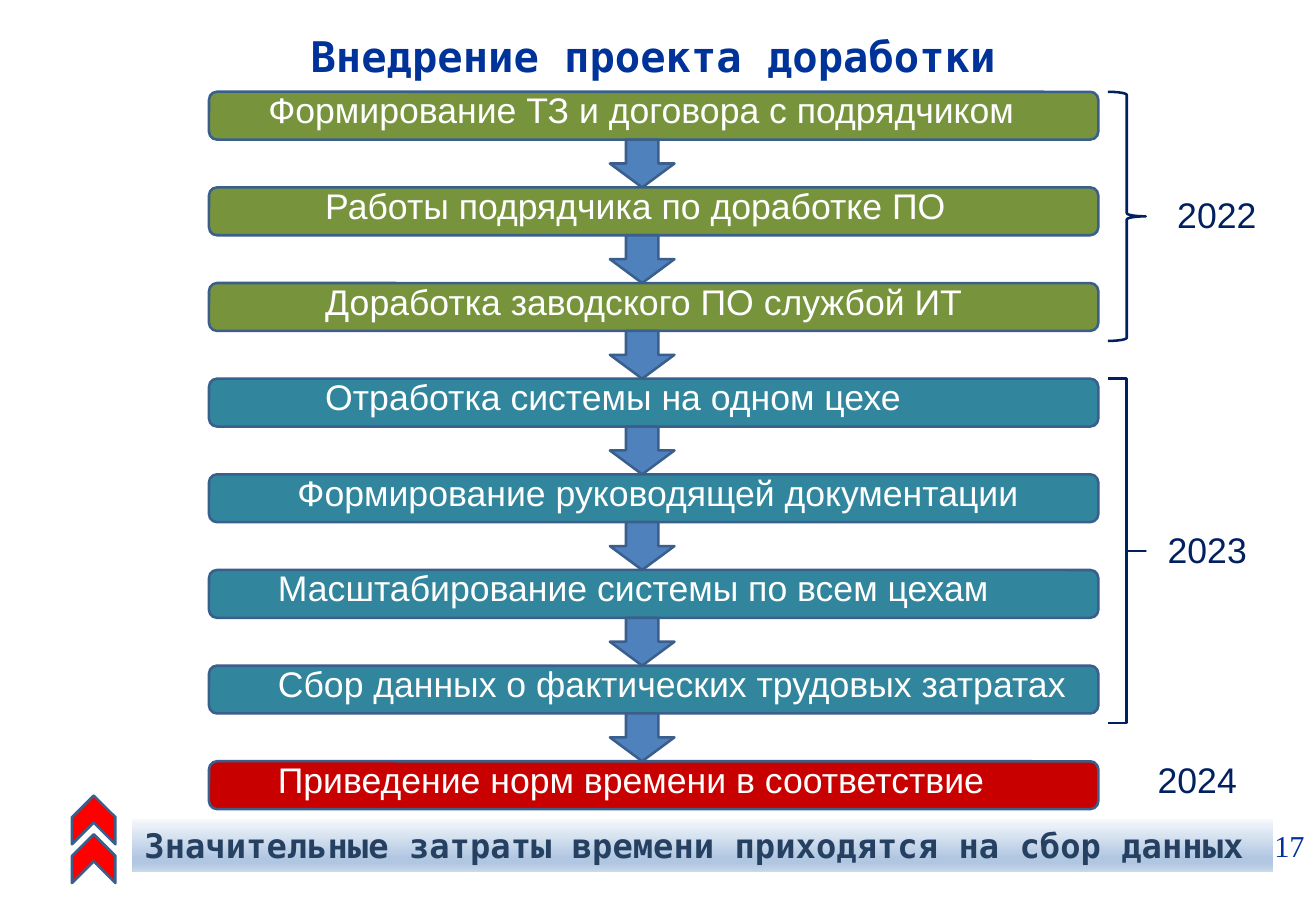
from lxml.etree import SubElement
from pptx import Presentation
from pptx.dml.color import RGBColor
from pptx.enum.shapes import MSO_SHAPE
from pptx.enum.text import MSO_ANCHOR, MSO_AUTO_SIZE, PP_ALIGN
from pptx.oxml.ns import qn
from pptx.util import Pt

SCALE = 3600
TOP, PITCH, STEP_H = 192, 200, 100
MONO = "DejaVu Sans Mono"
COLORS = {
    "green": "77933C", "teal": "31859C", "red": "C80000", "arrow": "4F81BD",
    "edge": "3A5F8C", "navy": "002060", "title": "003399", "slate": "254061",
    "white": "FFFFFF", "bright": "FF0000",
}
STEPS = [
    ("Формирование ТЗ и договора с подрядчиком", "green", 536, 1631),
    ("Работы подрядчика по доработке ПО", "green", 655, 1361),
    ("Доработка заводского ПО службой ИТ", "green", 655, 1417),
    ("Отработка системы на одном цехе", "teal", 655, 1417),
    ("Формирование руководящей документации", "teal", 597, 1580),
    ("Масштабирование системы по всем цехам", "teal", 556, 1620),
    ("Сбор данных о фактических трудовых затратах", "teal", 556, 1730),
    ("Приведение норм времени в соответствие", "red", 556, 1679),
]
YEARS = [("2022", 2436, 1), ("2023", 2416, 4.5), ("2024", 2395, 6.9)]
STOPS = [(0, "F6F9FC"), (74, "B0C6E1"), (83, "B0C6E1"), (100, "CAD9EB")]


def px(value):
    return round(value * SCALE)


def color(name):
    return RGBColor.from_string(COLORS[name])


def place(item, left, top, width, height):
    item.left, item.top = px(left), px(top)
    item.width, item.height = px(width), px(height)


def text(item, words, size=21.1, font="Arial", tint="navy", bold=False,
         align=PP_ALIGN.LEFT, anchor=MSO_ANCHOR.TOP, wrap=True, pad=25):
    frame = item.text_frame
    frame.text = words
    frame.word_wrap = wrap
    frame.auto_size = MSO_AUTO_SIZE.SHAPE_TO_FIT_TEXT
    frame.vertical_anchor = anchor
    frame.margin_left = frame.margin_right = px(pad)
    line = frame.paragraphs[0]
    line.alignment = align
    style = line.runs[0].font
    style.size, style.name, style.bold = Pt(size), font, bold
    style.color.rgb = color(tint)


def label(slide, words, left, top, width, height=117, **style):
    box = slide.shapes.add_textbox(px(left), px(top), px(width), px(height))
    text(box, words, **style)


def shape(slide, kind, left, top, width, height, fill=None, edge="edge"):
    item = slide.shapes.add_shape(kind, px(left), px(top), px(width), px(height))
    item.shadow.inherit = False
    if fill:
        item.fill.solid()
        item.fill.fore_color.rgb = color(fill)
    else:
        item.fill.background()
    if edge:
        item.line.color.rgb = color(edge)
        item.line.width = Pt(1.5)
    else:
        item.line.fill.background()
    return item


def blend(item, stops):
    item.fill.gradient()
    item.fill.gradient_angle = 270
    group = next(item.element.iter(qn("a:gsLst")))
    for old in list(group):
        group.remove(old)
    for spot, tint in stops:
        stop = SubElement(group, qn("a:gs"), pos=str(spot * 1000))
        SubElement(stop, qn("a:srgbClr"), val=tint)


def step(slide, top, words, fill, left, width, last):
    shape(slide, MSO_SHAPE.ROUNDED_RECTANGLE, 437, top, 1859, STEP_H, fill)
    if not last:
        shape(slide, MSO_SHAPE.DOWN_ARROW, 1275, top + STEP_H, 135,
              PITCH - STEP_H, "arrow")
    label(slide, words, left, top - 20, width, tint="white")


def brace(slide, top, height):
    return shape(slide, MSO_SHAPE.RIGHT_BRACE, 2316, top, 79, height, edge="navy")


def main():
    deck = Presentation()
    deck.slide_width, deck.slide_height = px(2751), px(1905)
    slide = deck.slides.add_slide(deck.slide_layouts[5])

    title = slide.shapes.title
    place(title, 495, 51, 1740, 132)
    text(title, "Внедрение проекта доработки", size=25, font=MONO, tint="title",
         bold=True, align=PP_ALIGN.CENTER)

    for row, (words, fill, left, width) in enumerate(STEPS):
        step(slide, TOP + row * PITCH, words, fill, left, width,
             row == len(STEPS) - 1)

    brace(slide, TOP, 521)
    square = brace(slide, TOP + 3 * PITCH, 720)
    square.adjustments[0] = 0
    for year, left, row in YEARS:
        label(slide, year, left, TOP + row * PITCH, 218, wrap=False)

    bar = shape(slide, MSO_SHAPE.RECTANGLE, 277, 1712, 2385, 112, edge=None)
    blend(bar, STOPS)
    text(bar, "Значительные затраты времени приходятся на сбор данных", size=20,
         font=MONO, tint="slate", bold=True, align=PP_ALIGN.JUSTIFY)

    for top in (1669, 1750):
        mark = shape(slide, MSO_SHAPE.CHEVRON, 145, top, 102, 91, "bright")
        mark.rotation = 270

    label(slide, "17", 2664, 1717, 84, 102, size=18, font="Times New Roman",
          tint="title", pad=0)
    deck.save("out.pptx")


if __name__ == "__main__":
    main()
